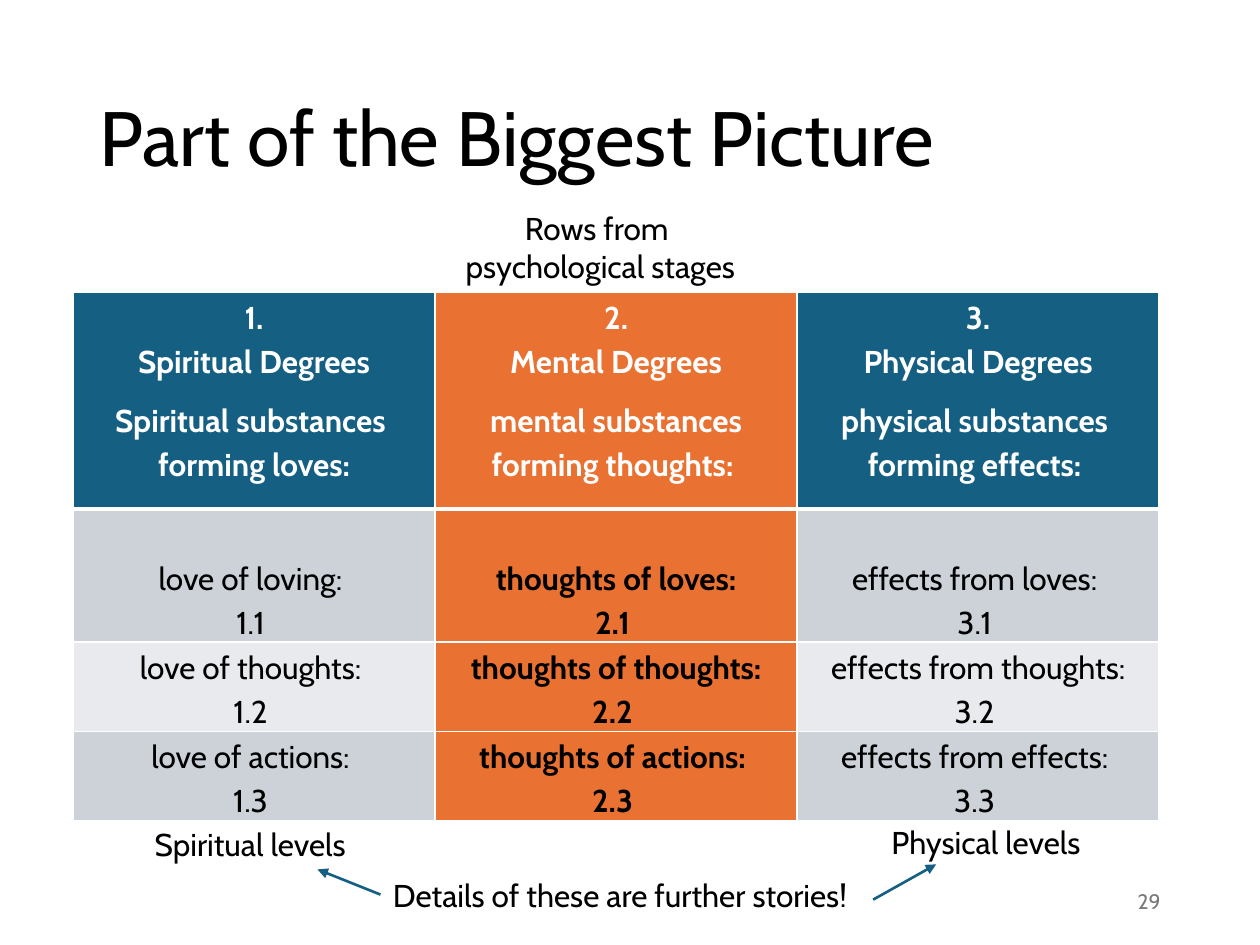
from lxml import etree
from pptx import Presentation
from pptx.dml.color import RGBColor
from pptx.enum.shapes import MSO_CONNECTOR
from pptx.enum.text import MSO_ANCHOR, MSO_AUTO_SIZE, PP_ALIGN
from pptx.oxml.ns import qn
from pptx.util import Inches, Pt

LEFT, CENTER, RIGHT = PP_ALIGN.LEFT, PP_ALIGN.CENTER, PP_ALIGN.RIGHT
MIDDLE = MSO_ANCHOR.MIDDLE
STRAIGHT = MSO_CONNECTOR.STRAIGHT
NO_AUTOFIT, GROW = MSO_AUTO_SIZE.NONE, MSO_AUTO_SIZE.SHAPE_TO_FIT_TEXT

FONT = "Cabin"
BLACK, WHITE, GRAY = "000000", "FFFFFF", "797979"
BLUE, ORANGE = "156082", "E97132"
BANDS = ["CCD2D8", "E8EAED"]

TITLE = "Part of the Biggest Picture"
PAGE_NUMBER = "29"
DEGREES = [
    [["1.\nSpiritual Degrees", "Spiritual substances \nforming loves:"],
     ["2.\nMental Degrees", "mental substances forming thoughts: "],
     ["3.\nPhysical Degrees", "physical substances \nforming effects: "]],
    [["\nlove of loving: \n1.1 "], ["\nthoughts of loves:\n2.1 "], ["\neffects from loves: \n3.1 "]],
    [["love of thoughts: \n1.2 "], ["thoughts of thoughts:\n2.2 "], ["effects from thoughts:\n3.2 "]],
    [["love of actions: \n1.3 "], ["thoughts of actions: \n2.3 "], ["effects from effects: \n3.3 "]],
]
TABLE_BOX = (0.58, 2.32, 8.62, 3.96)
ROW_HEIGHTS = [1.72, 0.96, 0.64, 0.64]
MENTAL_COLUMN = 1
LABELS = [
    ("Rows from \npsychological stages", (3.53, 1.61, 2.47, 0.71), CENTER),
    ("Spiritual levels", (1.09, 6.5, 1.79, 0.4), CENTER),
    ("Physical levels", (6.93, 6.48, 1.79, 0.4), CENTER),
    ("Details of these are further stories!", (3.02, 6.9, 3.95, 0.4), LEFT),
]
ARROWS = [(3.02, 7.1, 2.52, 6.9), (6.93, 7.14, 7.43, 6.86)]


def rgb(color):
    return RGBColor.from_string(color)


def write(paragraph, text, size=18, color=BLACK, bold=False, align=CENTER):
    paragraph.alignment = align
    for index, line in enumerate(text.split("\n")):
        if index:
            paragraph.add_line_break()
        if line:
            run = paragraph.add_run()
            run.text = line
            run.font.name = FONT
            run.font.size = Pt(size)
            run.font.bold = bold
            run.font.color.rgb = rgb(color)


def add_label(slide, text, box, align, **style):
    shape = slide.shapes.add_textbox(*map(Inches, box))
    write(shape.text_frame.paragraphs[0], text, align=align, **style)
    return shape.text_frame


def set_borders(cell, widths):
    properties = cell._tc.get_or_add_tcPr()
    for index, (side, width) in enumerate(widths.items()):
        line = etree.Element(qn(f"a:ln{side}"), w=str(Pt(width)))
        fill = etree.SubElement(line, qn("a:solidFill"))
        etree.SubElement(fill, qn("a:srgbClr"), val=WHITE)
        properties.insert(index, line)


def fill_cell(cell, paragraphs, row, column):
    header, mental = row == 0, column == MENTAL_COLUMN
    cell.margin_left = cell.margin_right = Inches(0.01)
    cell.margin_top = cell.margin_bottom = Inches(0.01)
    if mental:
        color = ORANGE
    else:
        color = BLUE if header else BANDS[(row - 1) % 2]
    cell.fill.solid()
    cell.fill.fore_color.rgb = rgb(color)
    set_borders(cell, {"L": 1, "R": 1, "T": 3 if row == 1 else 1, "B": 3 if header else 1})
    frame = cell.text_frame
    for index, text in enumerate(paragraphs):
        paragraph = frame.add_paragraph() if index else frame.paragraphs[0]
        paragraph.line_spacing = 1.15
        paragraph.space_after = Pt(8)
        write(paragraph, text, color=WHITE if header else BLACK, bold=header or mental)


def add_degrees_table(slide):
    table = slide.shapes.add_table(len(DEGREES), len(DEGREES[0]), *map(Inches, TABLE_BOX)).table
    for row, height in zip(table.rows, ROW_HEIGHTS):
        row.height = Inches(height)
    for row, cells in enumerate(DEGREES):
        for column, paragraphs in enumerate(cells):
            fill_cell(table.cell(row, column), paragraphs, row, column)


def add_arrow(slide, ends):
    connector = slide.shapes.add_connector(STRAIGHT, *map(Inches, ends))
    connector.line.color.rgb = rgb(BLUE)
    connector.line.width = Pt(1.5)
    etree.SubElement(connector.line._get_or_add_ln(), qn("a:tailEnd"), type="triangle")
    etree.SubElement(connector._element.spPr, qn("a:effectLst"))


def main():
    presentation = Presentation()
    presentation.slide_width, presentation.slide_height = Inches(10), Inches(7.5)
    slide = presentation.slides.add_slide(presentation.slide_layouts[5])

    title = slide.shapes.title
    title.left, title.top, title.width, title.height = map(Inches, (0.69, 0.4, 8.62, 1.45))
    frame = title.text_frame
    frame.vertical_anchor = MIDDLE
    frame.auto_size = NO_AUTOFIT
    frame.paragraphs[0].line_spacing = 0.9
    write(frame.paragraphs[0], TITLE, size=44, align=LEFT)

    number = add_label(slide, PAGE_NUMBER, (7.06, 6.95, 2.25, 0.4), RIGHT, size=12, color=GRAY)
    number.word_wrap = True
    number.vertical_anchor = MIDDLE

    add_degrees_table(slide)
    for text, box, align in LABELS:
        label = add_label(slide, text, box, align)
        label.word_wrap = False
        label.auto_size = GROW
    for ends in ARROWS:
        add_arrow(slide, ends)

    presentation.save("out.pptx")


if __name__ == "__main__":
    main()
